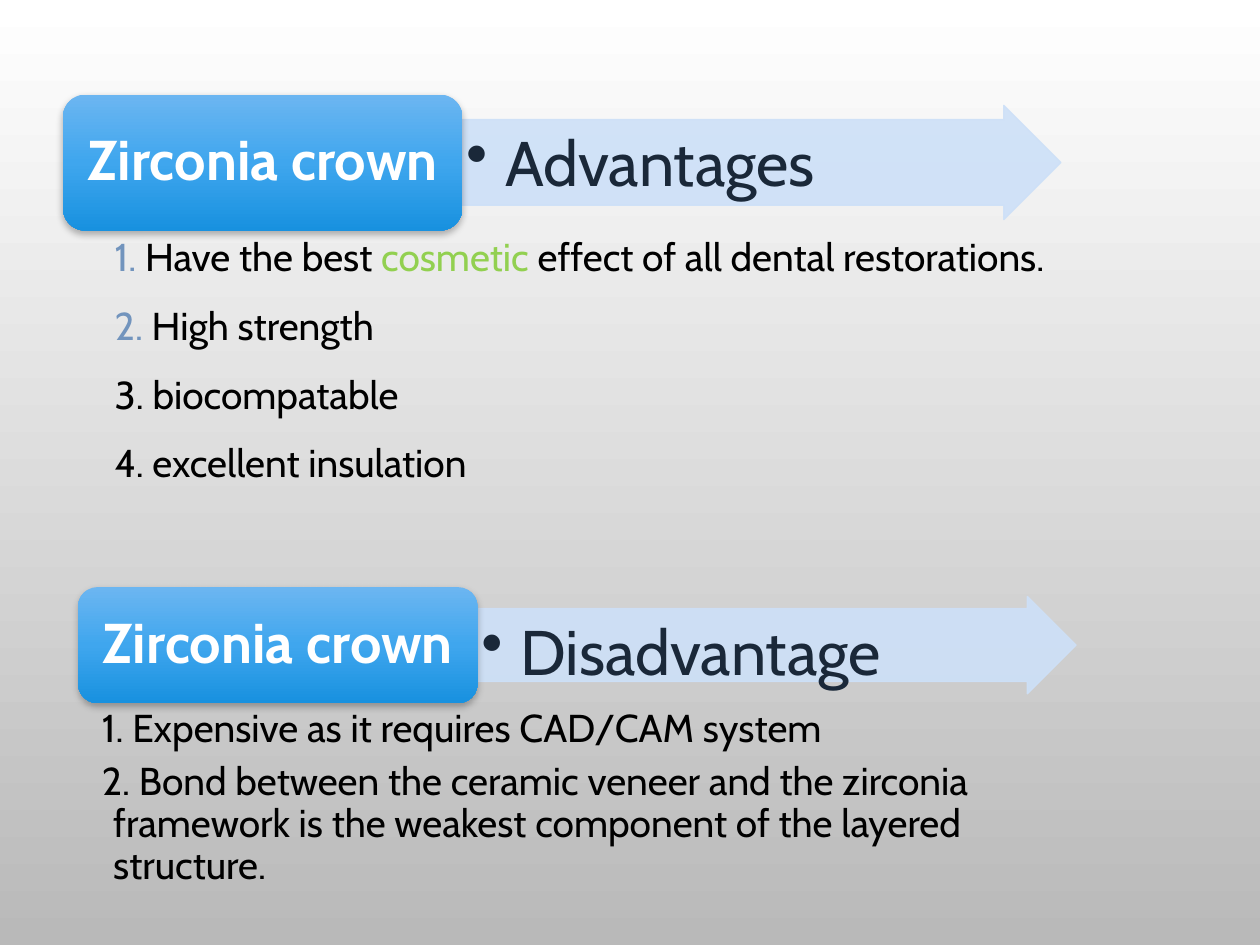
from dataclasses import dataclass

from lxml import etree
from pptx import Presentation
from pptx import util as u
from pptx.dml.color import RGBColor
from pptx.enum import shapes, text
from pptx.oxml.ns import qn


@dataclass(frozen=True)
class Theme:
    font: str = "Cabin"
    ink: str = "000000"
    label: str = "1A2839"
    white: str = "FFFFFF"
    number: str = "7294BD"
    accent: str = "92D050"
    arrow: str = "CDE0F8"
    page: tuple = ((0, "FFFFFF"), (100, "B9B9B9"))
    badge: tuple = ((0, "6CB6F1"), (50, "3FA6EE"), (100, "1891DF"))
    body_size: float = 22.2
    badge_size: float = 32
    label_size: float = 36


T = Theme()


def add_gradient(fill, root, stops):
    fill.gradient()
    fill.gradient_angle = 270
    gs_list = root.find(".//" + qn("a:gsLst"))
    for gs in list(gs_list):
        gs_list.remove(gs)
    for pos, color in stops:
        gs = etree.SubElement(gs_list, qn("a:gs"), pos=str(pos * 1000))
        etree.SubElement(gs, qn("a:srgbClr"), val=color)


def add_shadow(sp):
    effects = sp.element.spPr.find(qn("a:effectLst"))
    shadow = etree.SubElement(
        effects, qn("a:outerShdw"), blurRad=str(u.Pt(4)), dist=str(u.Pt(2)),
        dir="5400000", algn="ctr", rotWithShape="0")
    color = etree.SubElement(shadow, qn("a:srgbClr"), val="000000")
    etree.SubElement(color, qn("a:alpha"), val="28000")


def set_frame(tf, margins, anchor=text.MSO_ANCHOR.TOP):
    tf.word_wrap = True
    tf.auto_size = text.MSO_AUTO_SIZE.NONE
    tf.vertical_anchor = anchor
    tf.margin_left = tf.margin_right = u.Inches(margins[0])
    tf.margin_top = tf.margin_bottom = u.Inches(margins[1])


def write(p, content, size=T.body_size, color=T.ink, bold=False,
          align=text.PP_ALIGN.LEFT, spacing=1.0, before=0, left=0, indent=0,
          bullet=None):
    pPr = p._p.get_or_add_pPr()
    pPr.set("marL", str(u.Inches(left)))
    pPr.set("indent", str(u.Inches(indent)))
    p.alignment, p.line_spacing = align, spacing
    p.space_before, p.space_after = u.Pt(before), u.Pt(0)
    if bullet:
        etree.SubElement(pPr, qn("a:buChar"), char=bullet)
    else:
        etree.SubElement(pPr, qn("a:buNone"))
    runs = [(content, color)] if isinstance(content, str) else content
    for words, run_color in runs:
        r = p.add_run()
        r.text = words
        r.font.name, r.font.size, r.font.bold = T.font, u.Pt(size), bold
        r.font.color.rgb = RGBColor.from_string(run_color)


def add_shape(s, kind, box):
    sp = s.shapes.add_shape(kind, *map(u.Inches, box))
    sp.shadow.inherit = False
    return sp


def add_heading(s, box, badge_text, label):
    x, y, w, h = box
    badge_w = 3.17
    arrow_h = h * 0.84
    arrow = add_shape(s, shapes.MSO_SHAPE.RIGHT_ARROW,
                      (x + badge_w, y + (h - arrow_h) / 2, w - badge_w, arrow_h))
    arrow.adjustments[0], arrow.adjustments[1] = 0.75, 0.5
    arrow.line.width = u.Pt(0.75)
    for fill in (arrow.fill, arrow.line.fill):
        fill.solid()
        fill.fore_color.rgb = RGBColor.from_string(T.arrow)
    for color in arrow.element.spPr.iter(qn("a:srgbClr")):
        etree.SubElement(color, qn("a:alpha"), val="90000")
    set_frame(arrow.text_frame, (0.03, 0.03))
    write(arrow.text_frame.paragraphs[0], label, size=T.label_size,
          color=T.label, left=0.31, indent=-0.31, bullet="•")

    badge = add_shape(s, shapes.MSO_SHAPE.ROUNDED_RECTANGLE, (x, y, badge_w, h))
    add_gradient(badge.fill, badge.element.spPr, T.badge)
    badge.line.fill.background()
    add_shadow(badge)
    set_frame(badge.text_frame, (0.13, 0.07), text.MSO_ANCHOR.MIDDLE)
    write(badge.text_frame.paragraphs[0], badge_text, size=T.badge_size,
          color=T.white, bold=True, align=text.PP_ALIGN.CENTER, spacing=0.9)


def fill_list(sp, box, items, before, **fmt):
    sp.left, sp.top, sp.width, sp.height = map(u.Inches, box)
    tf = sp.text_frame
    set_frame(tf, (0.1, 0.05))
    for i, item in enumerate(items):
        p = tf.add_paragraph() if i else tf.paragraphs[0]
        write(p, item, before=before if i else 0, **fmt)


def main():
    prs = Presentation()
    prs.slide_width, prs.slide_height = u.Inches(10), u.Inches(7.5)
    s = prs.slides.add_slide(prs.slide_layouts[1])
    title = s.shapes.title.element
    title.getparent().remove(title)
    add_gradient(s.background.fill, s.element, T.page)

    advantages = [
        [("1. ", T.number), ("Have the best ", T.ink), ("cosmetic ", T.accent),
         ("effect of all dental restorations.", T.ink)],
        [("2. ", T.number), ("High strength", T.ink)],
        "3. biocompatable",
        "4. excellent insulation",
    ]
    disadvantages = [
        "1. Expensive as it requires CAD/CAM system",
        "2. Bond between the ceramic veneer and the zirconia framework is "
        "the weakest component of the layered structure.",
    ]
    fill_list(s.placeholders[1], (0.67, 1.76, 8.5, 2.25), advantages,
              before=10, spacing=1.1, left=0.14)
    add_heading(s, (0.5, 0.75, 7.92, 1.08), "Zirconia crown", "Advantages")
    add_heading(s, (0.62, 4.66, 7.92, 0.92), "Zirconia crown", "Disadvantage")
    fill_list(s.shapes.add_textbox(0, 0, 0, 0), (0.5, 5.58, 7.92, 1.58),
              disadvantages, before=6, spacing=0.9, left=0.3, indent=-0.09)
    prs.save("out.pptx")


if __name__ == "__main__":
    main()
